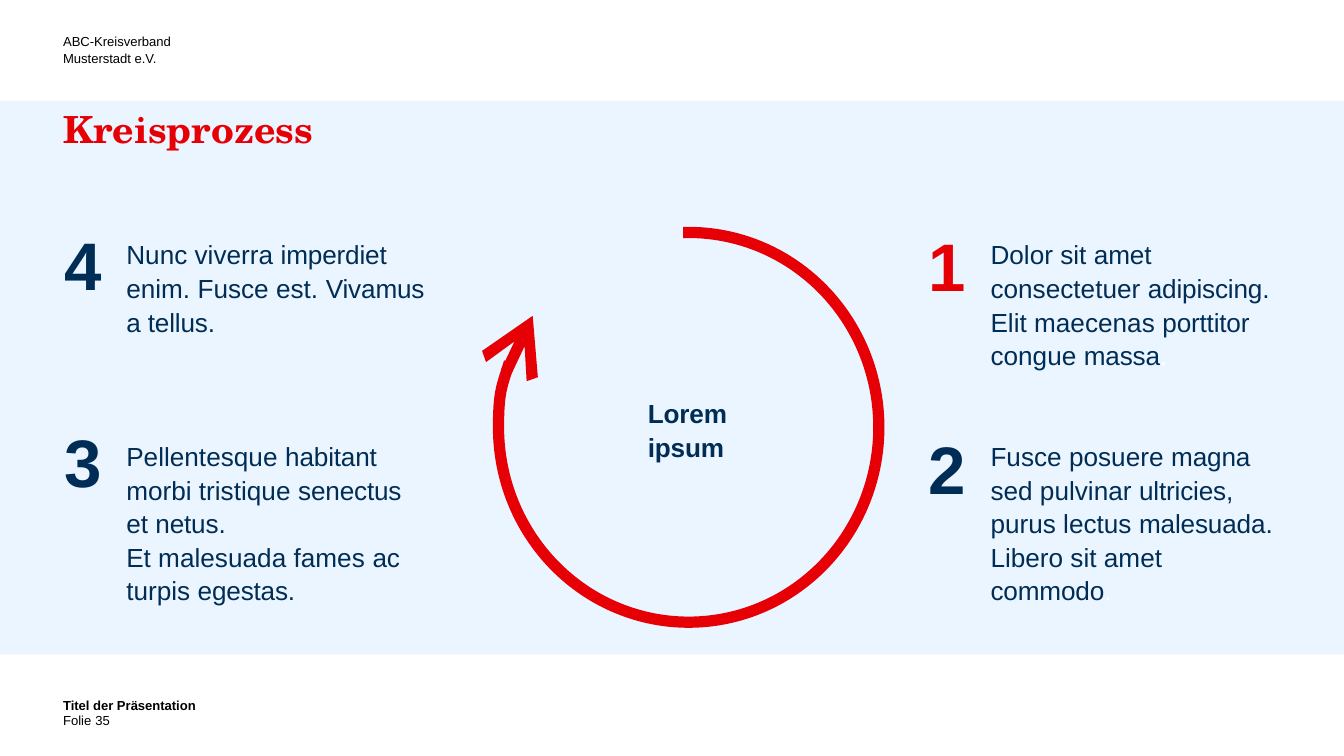
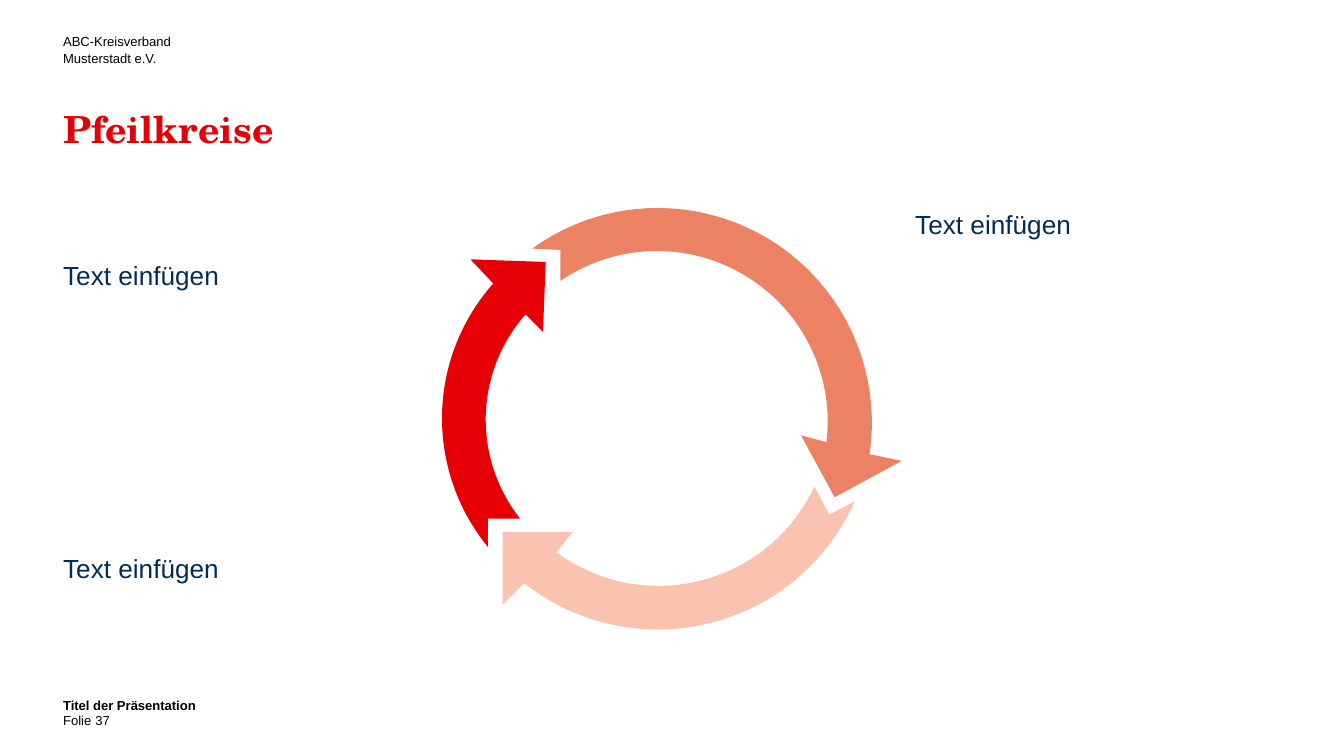
from math import atan2, cos, hypot, remainder, sin, tau

from lxml.etree import SubElement
from pptx import Presentation
from pptx.dml.color import RGBColor
from pptx.enum.shapes import MSO_SHAPE
from pptx.enum.text import MSO_ANCHOR
from pptx.oxml.ns import qn
from pptx.util import Inches, Pt

COLORS = {
    "red": "E60005",
    "coral": "EB8264",
    "peach": "FAC3AF",
    "navy": "002D55",
    "ice": "EBF5FF",
    "white": "FFFFFF",
    "black": "000000",
}
BODY_FONT = "Arial"
TITLE_FONT = "TeX Gyre Schola"
MARGIN = 0.47


def color(name):
    return RGBColor.from_string(COLORS[name])


def add_box(page, left, top, width, height, anchor=MSO_ANCHOR.TOP):
    """Add an empty text box without insets and return its frame."""
    box = page.shapes.add_textbox(Inches(left), Inches(top), Inches(width), Inches(height))
    frame = box.text_frame
    frame.word_wrap = True
    frame.vertical_anchor = anchor
    frame.margin_left = frame.margin_top = frame.margin_right = frame.margin_bottom = 0
    return frame


def add_para(frame, first, leading=None):
    para = frame.paragraphs[0] if first else frame.add_paragraph()
    if leading:
        para.line_spacing = Pt(leading)
    return para


def add_span(para, text, size, tone, bold=False, font=BODY_FONT, tight=False):
    span = para.add_run()
    span.text = text
    span.font.name = font
    span.font.size = Pt(size)
    span.font.bold = bold
    span.font.color.rgb = color(tone)
    if tight:
        span.font._element.set("spc", "-10")


def add_line(page, area, text, size, tone, leading=None, bold=False,
             font=BODY_FONT, anchor=MSO_ANCHOR.TOP):
    """Add a text box that holds one run."""
    para = add_para(add_box(page, *area, anchor), True, leading)
    add_span(para, text, size, tone, bold, font)


def add_frame(page, title, number):
    """Place what all slides share: header, title and footer."""
    header = add_box(page, MARGIN, 0.24, 1.79, 0.25)
    for index, text in enumerate(["ABC-Kreisverband", "Musterstadt e.V."]):
        add_span(add_para(header, index == 0, 9), text, 7, "black")
    add_line(page, (MARGIN, 0.79, 8.06, 0.64), title, 20, "red", 24, True, TITLE_FONT)
    add_line(page, (MARGIN, 5.18, 9.06, 0.09), "Titel der Präsentation", 7, "black", 9, True)
    add_line(page, (MARGIN, 5.29, 0.3, 0.13), "Folie", 7, "black", 9, anchor=MSO_ANCHOR.BOTTOM)
    add_line(page, (0.71, 5.3, 2.25, 0.12), number, 7, "black", 9, anchor=MSO_ANCHOR.BOTTOM)


def add_band(page, top, height):
    band = page.shapes.add_shape(
        MSO_SHAPE.RECTANGLE, 0, Inches(top), Inches(10), Inches(height))
    band.shadow.inherit = False
    band.fill.solid()
    band.fill.fore_color.rgb = color("ice")
    band.line.fill.background()


def add_step(page, left, top, width, number, tone, digit_top, paragraphs, pale_end=""):
    """Place a large digit and its text; every second run is set tighter."""
    add_line(page, (left + 0.01, digit_top, 0.31, 0.63), number, 36, tone, bold=True)
    frame = add_box(page, left + 0.47, top, width, 1.25)
    for row, runs in enumerate(paragraphs):
        para = add_para(frame, row == 0, 18)
        for index, text in enumerate(runs):
            add_span(para, text, 14, "navy", tight=index % 2 == 1)
    if pale_end:
        add_span(para, pale_end, 14, "white", tight=True)


def add_cycle(page, left, top, width, height):
    """Place the open circle with its arrowhead and the label inside."""
    arc = page.shapes.add_shape(
        MSO_SHAPE.ARC, Inches(left), Inches(top), Inches(width), Inches(height))
    arc.shadow.inherit = False
    arc.adjustments[0] = 162
    arc.adjustments[1] = 129.33
    arc.fill.background()
    arc.line.color.rgb = color("red")
    arc.line.width = Pt(6)
    stroke = arc.line._get_or_add_ln()
    stroke.set("cap", "sq")
    SubElement(stroke, qn("a:miter"), lim="800000")
    SubElement(stroke, qn("a:tailEnd"), type="arrow", w="lg", len="lg")
    label = add_box(page, left + 1.11, top + 1.21, 0.62, 0.49)
    add_span(add_para(label, True, 18), "Lorem ipsum", 14, "navy", True, tight=True)


def arc_points(center, start, end, steps=40):
    """Sweep from start to end around center, easing the radius between them."""
    (cx, cy), (sx, sy), (ex, ey) = center, start, end
    angle = atan2(sy - cy, sx - cx)
    sweep = remainder(atan2(ey - cy, ex - cx) - angle, tau)
    radius = hypot(sx - cx, sy - cy)
    growth = hypot(ex - cx, ey - cy) - radius
    points = []
    for step in range(steps + 1):
        share = step / steps
        reach = radius + growth * share
        turn = angle + sweep * share
        points.append((cx + reach * cos(turn), cy + reach * sin(turn)))
    return points


# Each arrow: colour, centre, outer edge, head, inner edge, notch in the tail
ARROWS = [
    ("red", (1.51, 1.56), [(0.34, 2.52), (0.38, 0.56)],
     [(0.21, 0.38), (0.77, 0.4), (0.75, 0.92)],
     [(0.62, 0.79), (0.58, 2.31)], (0.34, 2.31)),
    ("coral", (1.6, 1.59), [(0.67, 0.3), (3.18, 1.83)],
     [(3.42, 1.88), (2.92, 2.15), (2.67, 1.69)],
     [(2.86, 1.74), (0.88, 0.54)], (0.88, 0.31)),
    ("peach", (1.61, 1.53), [(3.07, 2.18), (0.61, 2.79)],
     [(0.45, 2.95), (0.45, 2.41), (0.97, 2.41)],
     [(0.85, 2.56), (2.77, 2.07)], (2.88, 2.28)),
]


def add_arrow_ring(page, left, top):
    for tone, center, outer, head, inner, notch in ARROWS:
        outline = [*arc_points(center, *outer), *head, *arc_points(center, *inner), notch]
        points = [(Inches(left + x), Inches(top + y)) for x, y in outline]
        builder = page.shapes.build_freeform(*points[0])
        builder.add_line_segments(points[1:], close=True)
        arrow = builder.convert_to_shape()
        arrow.shadow.inherit = False
        arrow.fill.solid()
        arrow.fill.fore_color.rgb = color(tone)
        arrow.line.fill.background()


def build_cycle_slide(page):
    add_band(page, 0.75, 4.12)
    add_frame(page, "Kreisprozess", "35")
    left, right = MARGIN, 6.9
    upper, lower = 1.76, 3.26
    wide, narrow = 2.24, 2.15
    add_step(page, left, upper, wide, "4", "navy", 1.66, [
        ["Nunc viverra ", "imperdiet ", "enim. Fusce est. ", "Vivamus ", "a", " tellus."]])
    add_step(page, left, lower, wide, "3", "navy", 3.13, [
        ["Pellentesque ", "habitant ", "morbi tristique ", "senectus ", "et ", "netus."],
        ["Et malesuada fames ", "ac ", "turpis ", "egestas."]])
    add_step(page, right, lower, narrow, "2", "navy", 3.18, [
        ["Fusce posuere ", "magna ", "sed pulvinar ", "ultricies, ",
         "purus lectus ", "malesuada."],
        ["Libero sit amet ", "commodo"]], ".")
    add_step(page, right, upper, narrow, "1", "red", 1.67, [
        ["Dolor sit ", "amet ", "consectetuer ", "adipiscing."],
        ["Elit maecenas ", "porttitor ", "congue ", "massa"]], ".")
    add_cycle(page, 3.71, 1.73, 2.83, 2.9)


def build_arrow_slide(page):
    add_frame(page, "Pfeilkreise", "37")
    add_arrow_ring(page, 3.29, 1.55)
    for area in [(MARGIN, 4.11, 9.06, 1.13), (6.81, 1.55, 2.62, 1.85),
                 (MARGIN, 1.93, 2.72, 1.96)]:
        add_line(page, area, "Text einfügen", 14, "navy", 17)


def main():
    deck = Presentation()
    deck.slide_width = Inches(10)
    deck.slide_height = deck.slide_width * 9 // 16
    for build in (build_cycle_slide, build_arrow_slide):
        build(deck.slides.add_slide(deck.slide_layouts[6]))
    deck.save("out.pptx")


if __name__ == "__main__":
    main()
